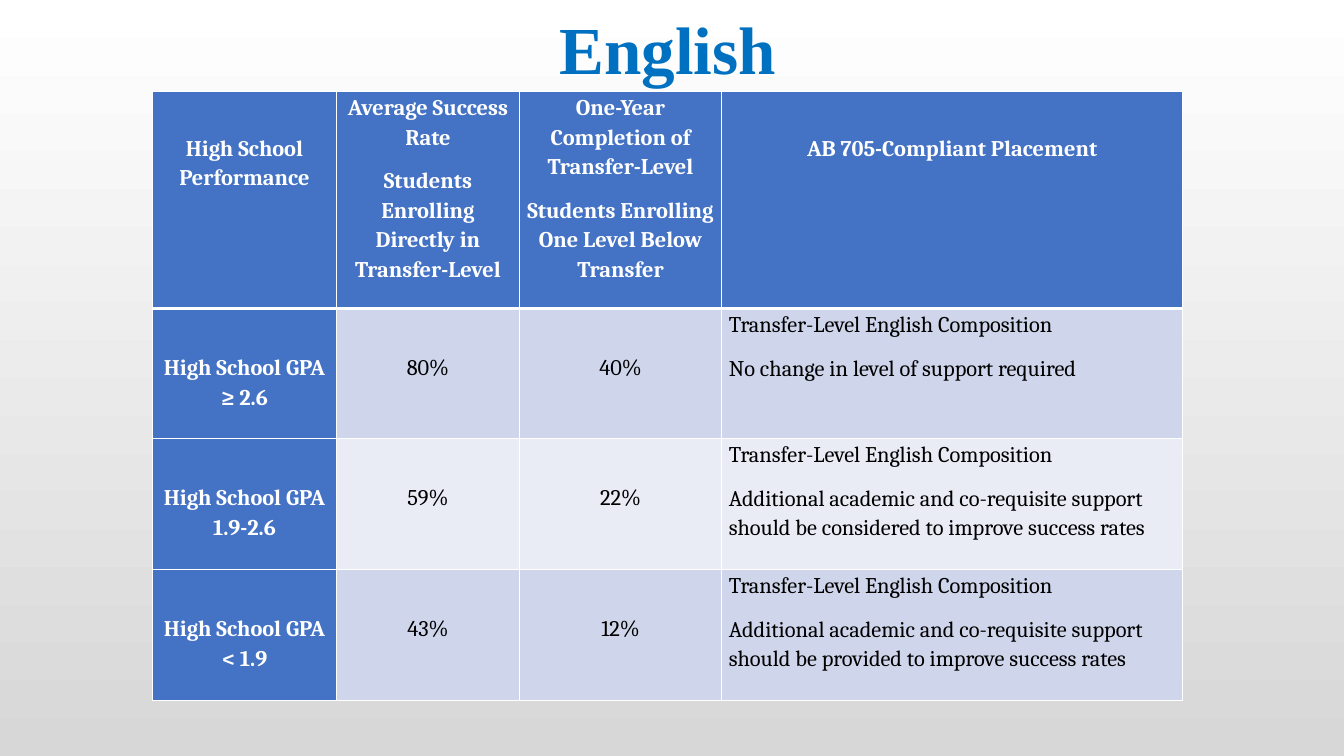
from lxml.etree import SubElement
from pptx import Presentation
from pptx.dml.color import RGBColor
from pptx.enum.text import MSO_ANCHOR, PP_ALIGN
from pptx.oxml.ns import qn
from pptx.util import Pt

PX = 9144
WHITE = RGBColor(0xFF, 0xFF, 0xFF)
BLACK = RGBColor(0, 0, 0)
GRAY = RGBColor(0xD7, 0xD7, 0xD7)
TITLE_BLUE = RGBColor(0x00, 0x70, 0xC0)
HEADER_BLUE = RGBColor(0x44, 0x72, 0xC4)
BANDS = (RGBColor(0xCF, 0xD5, 0xEA), RGBColor(0xE9, 0xEB, 0xF5))

COLUMN_WIDTHS = (183, 181, 201, 457)
ROW_HEIGHTS = (215, 129, 130, 130)
COURSE = "Transfer-Level English Composition"
ROWS = (
    (
        ("High School Performance",),
        ("Average Success Rate", "Students Enrolling Directly in Transfer-Level"),
        ("One-Year Completion of Transfer-Level", "Students Enrolling One Level Below Transfer"),
        ("AB 705-Compliant Placement",),
    ),
    (
        ("High School GPA ≥ 2.6",), ("80%",), ("40%",),
        (COURSE, "No change in level of support required"),
    ),
    (
        ("High School GPA 1.9-2.6",), ("59%",), ("22%",),
        (COURSE, "Additional academic and co-requisite support should be considered to improve success rates"),
    ),
    (
        ("High School GPA < 1.9",), ("43%",), ("12%",),
        (COURSE, "Additional academic and co-requisite support should be provided to improve success rates"),
    ),
)


def write_text(frame, lines, *, font, size, color, bold, align, spacing, after=0):
    frame.word_wrap = True
    for index, line in enumerate(lines):
        paragraph = frame.paragraphs[0] if index == 0 else frame.add_paragraph()
        paragraph.alignment = align
        paragraph.line_spacing = spacing
        paragraph.space_after = Pt(after)
        run = paragraph.add_run()
        run.text = line
        run.font.name = font
        run.font.size = Pt(size)
        run.font.bold = bold
        run.font.color.rgb = color


def set_borders(cell, widths):
    properties = cell._tc.get_or_add_tcPr()
    for side, width in widths.items():
        line = SubElement(properties, qn(f"a:ln{side}"), w=str(Pt(width)))
        fill = SubElement(line, qn("a:solidFill"))
        SubElement(fill, qn("a:srgbClr"), val=str(WHITE))


def paint_background(slide):
    fill = slide.background.fill
    fill.gradient()
    fill.gradient_angle = 270
    for stop, color in zip(fill.gradient_stops, (WHITE, GRAY)):
        stop.color.rgb = color


def add_title(slide, left, top, width, height):
    box = slide.shapes.add_textbox(left * PX, top * PX, width * PX, height * PX)
    box.text_frame.vertical_anchor = MSO_ANCHOR.MIDDLE
    write_text(box.text_frame, ("English",), font="Times New Roman", size=48,
               color=TITLE_BLUE, bold=True, align=PP_ALIGN.CENTER, spacing=0.9)


def add_placement_table(slide, left, top):
    frame = slide.shapes.add_table(
        len(ROWS), len(COLUMN_WIDTHS), left * PX, top * PX,
        sum(COLUMN_WIDTHS) * PX, sum(ROW_HEIGHTS) * PX)
    table = frame.table
    table.first_col = True
    for column, width in zip(table.columns, COLUMN_WIDTHS):
        column.width = width * PX
    for row, height in zip(table.rows, ROW_HEIGHTS):
        row.height = height * PX
    for row_index, row in enumerate(ROWS):
        for column_index, lines in enumerate(row):
            cell = table.cell(row_index, column_index)
            is_header = row_index == 0 or column_index == 0
            set_borders(cell, {"L": 1, "R": 1, "T": 3 if row_index == 1 else 1,
                               "B": 3 if row_index == 0 else 1})
            cell.fill.solid()
            cell.fill.fore_color.rgb = HEADER_BLUE if is_header else BANDS[(row_index - 1) % 2]
            cell.margin_left = cell.margin_right = 7 * PX
            lowered = 40 if row_index == 0 else 43
            cell.margin_top = lowered * PX if len(lines) == 1 else 0
            cell.margin_bottom = 0
            is_placement = row_index > 0 and column_index == len(row) - 1
            write_text(cell.text_frame, lines, font="Cambria", size=16,
                       color=WHITE if is_header else BLACK, bold=is_header,
                       align=PP_ALIGN.LEFT if is_placement else PP_ALIGN.CENTER,
                       spacing=1.15, after=10)


def main():
    presentation = Presentation()
    presentation.slide_width = 1333 * PX
    presentation.slide_height = 750 * PX
    slide = presentation.slides.add_slide(presentation.slide_layouts[6])
    paint_background(slide)
    add_title(slide, 92, 0, 1141, 105)
    add_placement_table(slide, 151, 91)
    presentation.save("out.pptx")


if __name__ == "__main__":
    main()
